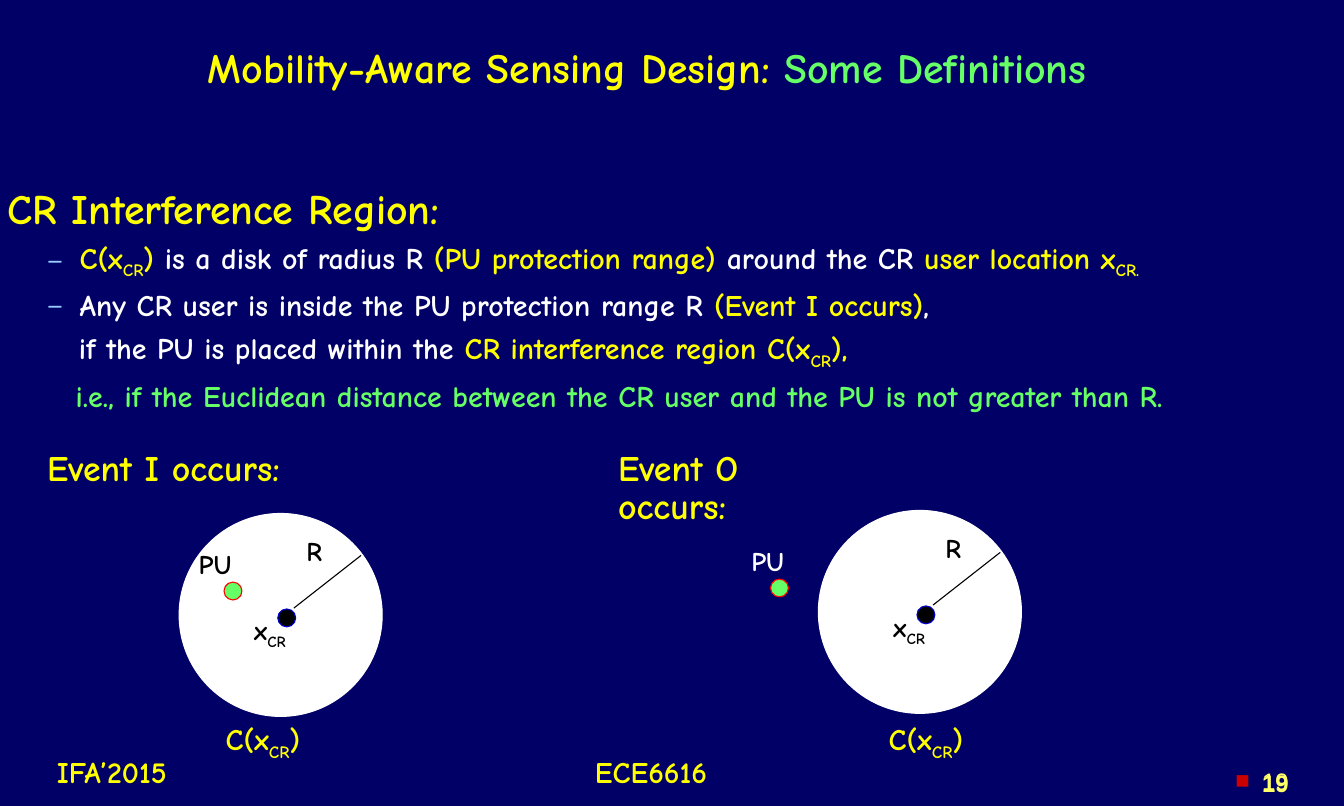
from dataclasses import dataclass

from lxml.etree import SubElement
from pptx import Presentation
from pptx.dml.color import RGBColor
from pptx.enum.shapes import MSO_CONNECTOR as Connector, MSO_SHAPE as Preset
from pptx.enum.text import MSO_ANCHOR as Anchor, MSO_AUTO_SIZE as AutoSize, PP_ALIGN as Align
from pptx.oxml.ns import qn
from pptx.util import Emu, Pt

COLUMNS, ROWS = 75, 45
CELL = 152400
FONT = "Comic Neue"
COLORS = {
    "navy": "000066", "yellow": "FFFF00", "green": "66FF66", "white": "FFFFFF",
    "black": "000000", "blue": "0000CC", "red": "FF0000", "dash": "99CCFF",
    "number": "FFFF66", "square": "CC0000",
}


@dataclass
class Span:
    text: str
    color: str = "yellow"
    sub: bool = False


@dataclass
class Line:
    spans: list[Span]
    size: int = 20
    margin: float = 0
    hanging: float = 0
    bullet: str = ""
    bullet_color: str = "dash"
    spacing: float = 1
    before: float = 0
    align: Align = Align.LEFT
    font: str = FONT
    bold: bool = True


@dataclass
class Event:
    heading: str
    heading_column: float
    disk_column: float
    disk_row: float
    pu_dot: float
    pu_label: float
    pu_color: str
    caption_column: float


def grid(cells: float) -> Emu:
    return Emu(round(cells * CELL))


def rgb(name: str) -> RGBColor:
    return RGBColor.from_string(COLORS[name])


def region(color: str = "yellow") -> list[Span]:
    return [Span("C(x", color), Span("CR", color, True), Span(")", color)]


def write(para, line: Line) -> None:
    props = para._p.get_or_add_pPr()
    props.set("marL", str(grid(line.margin)))
    props.set("indent", str(grid(-line.hanging)))
    if line.bullet:
        SubElement(SubElement(props, qn("a:buClr")), qn("a:srgbClr"), val=COLORS[line.bullet_color])
        SubElement(props, qn("a:buFont"), typeface=line.font)
        SubElement(props, qn("a:buChar"), char=line.bullet)
    para.alignment = line.align
    para.line_spacing = line.spacing
    para.space_before = Pt(line.before)
    for item in line.spans:
        span = para.add_run()
        span.text = item.text
        span.font.name = line.font
        span.font.size = Pt(line.size)
        span.font.bold = line.bold
        span.font.color.rgb = rgb(item.color)
        if item.sub:
            span.font._element.set("baseline", "-25000")


def add_text(page, column: float, row: float, width: float, height: float,
             lines: list[Line], wrap: bool = False):
    box = page.shapes.add_textbox(grid(column), grid(row), grid(width), grid(height))
    frame = box.text_frame
    frame.word_wrap = wrap
    for index, line in enumerate(lines):
        write(frame.add_paragraph() if index else frame.paragraphs[0], line)
    return box


def add_label(page, column: float, row: float, width: float, spans: list[Span],
              size: int = 18, align: Align = Align.LEFT) -> None:
    add_text(page, column, row, width, size / 8, [Line(spans, size, spacing=0.9, align=align)])


def add_disk(page, column: float, row: float, diameter: float, fill: str, outline: str) -> None:
    disk = page.shapes.add_shape(Preset.OVAL, grid(column), grid(row), grid(diameter), grid(diameter))
    disk.shadow.inherit = False
    disk.fill.solid()
    disk.fill.fore_color.rgb = rgb(fill)
    disk.line.color.rgb = rgb(outline)
    disk.line.width = Pt(0.75)


def add_radius(page, column: float, row: float) -> None:
    radius = page.shapes.add_connector(
        Connector.STRAIGHT, grid(column + 6.4), grid(row + 5.28), grid(column + 10.15), grid(row + 2.34))
    radius.line.color.rgb = rgb("black")
    radius.line.width = Pt(0.75)
    SubElement(radius._element.spPr, qn("a:effectLst"))


def add_event(page, event: Event) -> None:
    column, row = event.disk_column, event.disk_row
    add_label(page, event.heading_column, 24.84, 14.6, [Span(event.heading)], 24)
    add_disk(page, column, row, 11.33, "white", "white")
    add_disk(page, column + 5.5, row + 5.33, 1, "black", "blue")
    add_disk(page, column + event.pu_dot, row + 3.83, 1, "green", "red")
    add_radius(page, column, row)
    add_label(page, column + 6.5, row + 1.08, 2.2, [Span("R", "black")])
    add_label(page, column + 3.6, row + 5.33, 3.36, [Span("x", "black"), Span("CR", "black", True)])
    add_label(page, column + event.pu_label, row + 1.8, 3.1, [Span("PU", event.pu_color)])
    add_label(page, event.caption_column, 40, 5.88, region(), 20)


DEFINITION = [
    Line([Span("CR Interference Region:")], 28, 0.42, spacing=0.8),
    Line([*region(), Span(" "), Span("is a disk of radius R ", "white"),
          Span("(PU protection range) "), Span("around the CR ", "white"),
          Span("user location x"), Span("CR.", sub=True)],
         margin=4.44, hanging=1.86, bullet="–", before=4.6),
    Line([Span("Any CR user is inside the PU protection range R ", "white"),
          Span("(Event I occurs)"), Span(",", "white")],
         margin=4.44, hanging=1.86, bullet="–", before=4.6),
    Line([Span("if the PU is placed within the ", "white"),
          Span("CR interference region "), *region(), Span(",")], margin=4.4, before=4.6),
    Line([Span("i.e., if the Euclidean distance between the CR user and the PU "
               "is not greater than R.", "green")], margin=4.22, before=4.6),
]

EVENTS = [
    Event("Event I occurs:", 2.04, 10, 28.67, 2.5, 0.5, "black", 12),
    Event("Event O occurs:", 33.9, 45.67, 28.5, -2.67, -4.33, "white", 49),
]


def main() -> None:
    deck = Presentation()
    deck.slide_width, deck.slide_height = grid(COLUMNS), grid(ROWS)
    page = deck.slides.add_slide(deck.slide_layouts[5])
    page.background.fill.solid()
    page.background.fill.fore_color.rgb = rgb("navy")

    title = page.shapes.title
    title.left, title.top, title.width, title.height = grid(11), grid(1), grid(64), grid(5.5)
    title.text_frame.auto_size = AutoSize.NONE
    title.text_frame.vertical_anchor = Anchor.MIDDLE
    write(title.text_frame.paragraphs[0],
          Line([Span("Mobility-Aware Sensing Design: "), Span("Some Definitions", "green")], 28))

    body = add_text(page, 0, 10.74, COLUMNS, 13, DEFINITION, wrap=True).text_frame
    body.margin_left = body.margin_right = body.margin_top = body.margin_bottom = 0

    for event in EVENTS:
        add_event(page, event)

    add_label(page, 1.8, 42, 8.88, [Span("IFA’2015")], 20, Align.CENTER)
    add_label(page, 32.1, 42, 8.46, [Span("ECE6616")], 20, Align.CENTER)

    number = [Span("19", "number")]
    add_text(page, 67.5, 42.5, 5, 2, [
        Line(number, 16, 1.5, 1.5, "■", "square", align=Align.RIGHT, font="Arial", bold=False)], True)
    add_text(page, 67.5, 42.6, 5, 2, [Line(number, 16, align=Align.RIGHT, font="Arial")], True)

    deck.save("out.pptx")


if __name__ == "__main__":
    main()
